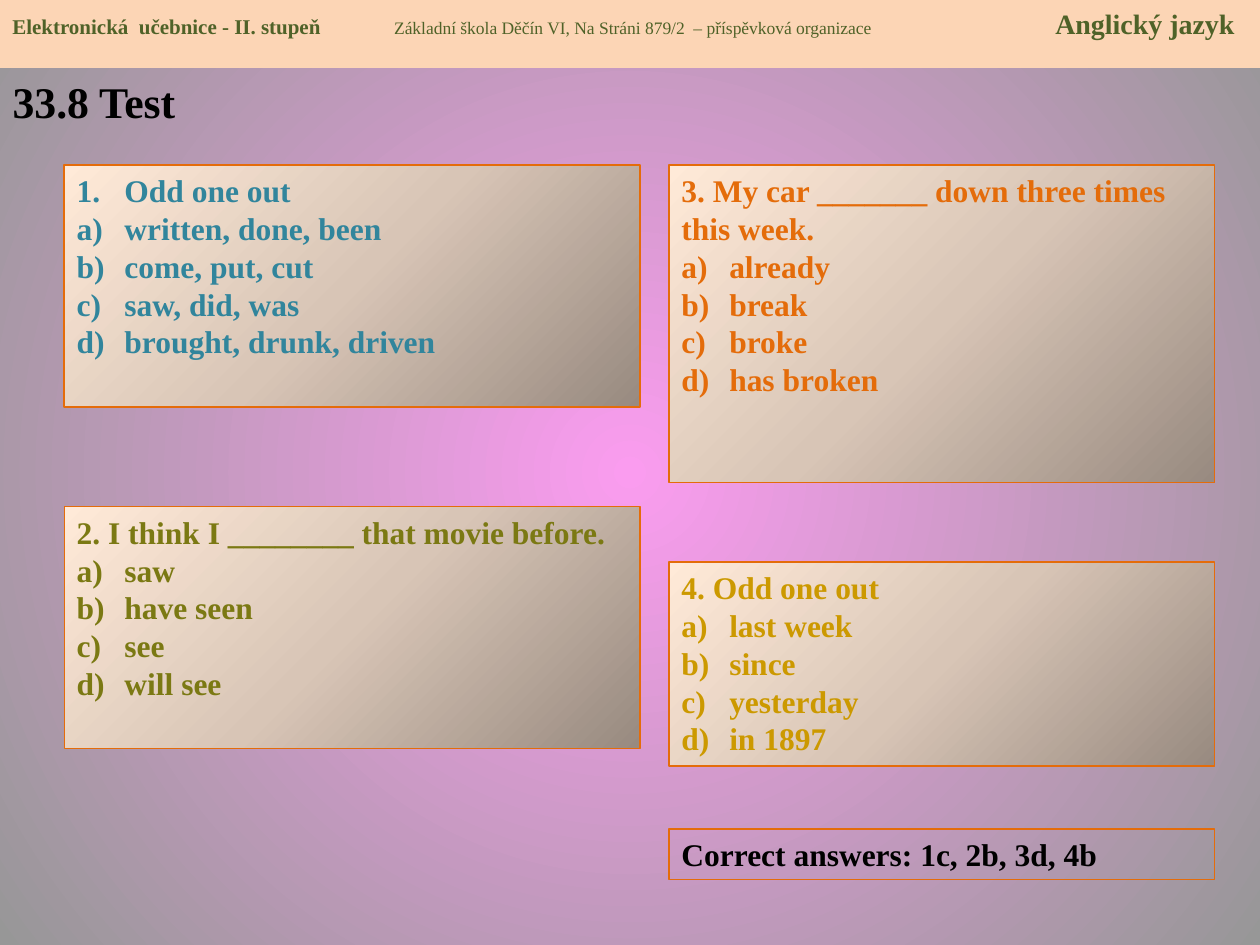
from dataclasses import dataclass

from lxml import etree
from pptx import Presentation
from pptx.dml.color import RGBColor
from pptx.enum.shapes import MSO_SHAPE
from pptx.enum.text import MSO_ANCHOR, MSO_AUTO_SIZE, PP_ALIGN
from pptx.oxml.ns import qn
from pptx.util import Inches, Pt

RECTANGLE = MSO_SHAPE.RECTANGLE
TOP = MSO_ANCHOR.TOP
NO_AUTOFIT = MSO_AUTO_SIZE.NONE
LEFT = PP_ALIGN.LEFT
TITLE_ONLY = 5


@dataclass(frozen=True)
class Theme:
    """Colours, type sizes and font of the slide."""
    font: str = "Times New Roman"
    black: str = "000000"
    band: str = "FCD5B5"
    green: str = "4F6228"
    orange: str = "E46C0A"
    teal: str = "31859C"
    olive: str = "7B7913"
    gold: str = "CC9900"
    backdrop: tuple = ((0, "FA9CEF"), (100, "979797"))
    card: tuple = ((0, "988A80"), (50, "D8C5B6"), (100, "FFEAD8"))
    title_size: float = 25
    subject_size: float = 16
    book_size: float = 12
    school_size: float = 10
    body_size: float = 18


THEME = Theme()


def fill_radially(owner, fill, stops, focus):
    """Give the fill inside owner a circular gradient around focus (l, t, r, b in percent)."""
    fill.gradient()
    gradient = next(owner.iter(qn("a:gradFill")))
    for child in list(gradient):
        gradient.remove(child)
    stop_list = etree.SubElement(gradient, qn("a:gsLst"))
    for position, colour in stops:
        stop = etree.SubElement(stop_list, qn("a:gs"), pos=str(position * 1000))
        etree.SubElement(stop, qn("a:srgbClr"), val=colour)
    circle = etree.SubElement(gradient, qn("a:path"), path="circle")
    sides = {side: str(value * 1000) for side, value in zip("ltrb", focus)}
    etree.SubElement(circle, qn("a:fillToRect"), **sides)


def write(paragraph, text, size=THEME.body_size, colour=THEME.black, bold=True, numbering=None):
    """Add a formatted run, numbering its paragraph if asked."""
    paragraph.alignment = LEFT
    if numbering:
        properties = paragraph._p.get_or_add_pPr()
        properties.set("marL", str(Inches(0.38)))
        properties.set("indent", str(-Inches(0.38)))
        etree.SubElement(properties, qn("a:buFont"), typeface="+mj-lt")
        etree.SubElement(properties, qn("a:buAutoNum"), type=numbering)
    run = paragraph.add_run()
    run.text = text
    run.font.name = THEME.font
    run.font.size = Pt(size)
    run.font.bold = bold
    run.font.color.rgb = RGBColor.from_string(colour)


def prepare_frame(frame):
    """Set a text frame to wrap from the top at a fixed size."""
    frame.word_wrap = True
    frame.auto_size = NO_AUTOFIT
    frame.vertical_anchor = TOP


def add_panel(slide, box, line_width=None):
    """Add an unfilled rectangle, outlined if a line width is given."""
    panel = slide.shapes.add_shape(RECTANGLE, *map(Inches, box))
    panel.shadow.inherit = False
    panel.fill.background()
    if line_width:
        panel.line.color.rgb = RGBColor.from_string(THEME.orange)
        panel.line.width = Pt(line_width)
    else:
        panel.line.fill.background()
    prepare_frame(panel.text_frame)
    return panel


def place_title(slide, box, text):
    """Move the title placeholder to box and write the title."""
    title = slide.shapes.title
    title.left, title.top, title.width, title.height = map(Inches, box)
    prepare_frame(title.text_frame)
    write(title.text_frame.paragraphs[0], text, size=THEME.title_size)


def add_header(slide, box, book, school, subject):
    """Add the top band with three entries on tab stops."""
    band = add_panel(slide, box)
    band.fill.solid()
    band.fill.fore_color.rgb = RGBColor.from_string(THEME.band)
    entries = band.text_frame.paragraphs[0]
    tabs = etree.SubElement(entries._p.get_or_add_pPr(), qn("a:tabLst"))
    for position, alignment in ((3.03, "l"), (box[2] - 0.3, "r")):
        etree.SubElement(tabs, qn("a:tab"), pos=str(Inches(position)), algn=alignment)
    write(entries, book, size=THEME.book_size, colour=THEME.green)
    write(entries, "\t" + school, size=THEME.school_size, colour=THEME.green, bold=False)
    write(entries, "\t" + subject, size=THEME.subject_size, colour=THEME.green)


def add_question(slide, box, question, options, colour, numbering=None, line_width=0.75):
    """Add a card with a question and its lettered options."""
    card = add_panel(slide, box, line_width)
    fill_radially(card._element, card.fill, THEME.card, (100, 100, 0, 0))
    frame = card.text_frame
    write(frame.paragraphs[0], question, colour=colour, numbering=numbering)
    for option in options:
        write(frame.add_paragraph(), option, colour=colour, numbering="alphaLcParenR")


def add_answers(slide, box, text):
    """Add the outlined box with the correct answers."""
    answers = add_panel(slide, box, 0.75)
    write(answers.text_frame.paragraphs[0], text)


def main():
    """Build the test slide and save it."""
    deck = Presentation()
    deck.slide_width, deck.slide_height = Inches(10), Inches(7.5)
    slide = deck.slides.add_slide(deck.slide_layouts[TITLE_ONLY])
    fill_radially(slide._element, slide.background.fill, THEME.backdrop, (50, 50, 50, 50))

    header_height = 0.54
    place_title(slide, (0, header_height, 10, 7.5 - header_height), "33.8 Test")
    add_header(slide, (0, 0, 10, header_height), "Elektronická  učebnice - II. stupeň",
               "Základní škola Děčín VI, Na Stráni 879/2  – příspěvková organizace",
               "Anglický jazyk")

    left, left_width = 0.51, 4.57
    right, right_width = 5.31, 4.33
    first_row = 1.31
    add_question(slide, (left, first_row, left_width, 1.92), "Odd one out",
                 ("written, done, been", "come, put, cut", "saw, did, was",
                  "brought, drunk, driven"),
                 THEME.teal, numbering="arabicPeriod", line_width=1)
    add_question(slide, (left, 4.02, left_width, 1.92),
                 "2. I think I ________ that movie before.",
                 ("saw", "have seen", "see", "will see"), THEME.olive)
    add_question(slide, (right, first_row, right_width, 2.52),
                 "3. My car _______ down three times this week.",
                 ("already", "break", "broke", "has broken"), THEME.orange)
    add_question(slide, (right, 4.46, right_width, 1.62), "4. Odd one out",
                 ("last week", "since", "yesterday", "in 1897"), THEME.gold)
    add_answers(slide, (right, 6.58, right_width, 0.4), "Correct answers: 1c, 2b, 3d, 4b")
    deck.save("out.pptx")


if __name__ == "__main__":
    main()
